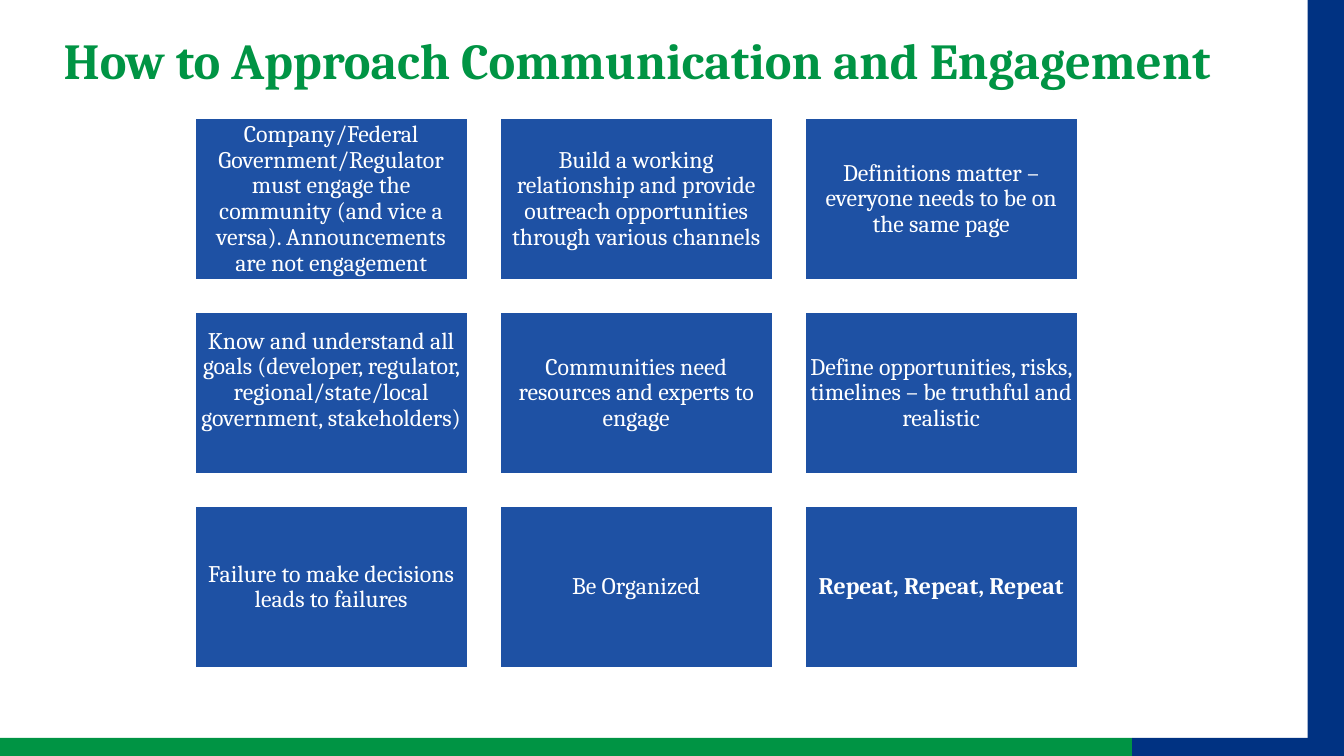
from pptx import Presentation
from pptx.dml.color import RGBColor
from pptx.enum.shapes import MSO_SHAPE as Shape
from pptx.enum.text import MSO_ANCHOR as Anchor, PP_ALIGN as Align
from pptx.util import Inches, Pt

COLORS = {"green": "009444", "navy": "003282", "card": "1E51A4", "white": "FFFFFF"}
WIDTH, HEIGHT = 13.33, 7.5
COLUMNS = 3
CARD_WIDTH, CARD_HEIGHT = 2.75, 1.65
TITLE_FORMAT = {"name": "Cambria", "size": Pt(36), "bold": True}
CARD_FORMAT = {"name": "Cambria", "size": Pt(17), "bold": False}
INSET = 0.07
GOALS = (
    "Know and understand all goals (developer, regulator, "
    "regional/state/local government, stakeholders)"
)
REPEAT = "Repeat, Repeat, Repeat"
APPROACHES = [
    "Company/Federal Government/Regulator must engage the community "
    "(and vice a versa). Announcements are not engagement",
    "Build a working relationship and provide outreach opportunities "
    "through various channels",
    "Definitions matter – everyone needs to be on the same page",
    GOALS,
    "Communities need resources and experts to engage",
    "Define opportunities, risks, timelines – be truthful and realistic",
    "Failure to make decisions leads to failures",
    "Be Organized",
    REPEAT,
]
BOTTOM_INSETS = {GOALS: 0.33}


def rgb(color):
    return RGBColor.from_string(COLORS[color])


def add_block(slide, box, color):
    block = slide.shapes.add_shape(Shape.RECTANGLE, *map(Inches, box))
    block.shadow.inherit = False
    block.fill.solid()
    block.fill.fore_color.rgb = rgb(color)
    block.line.fill.background()
    return block


def write(frame, text, font_format, color, insets):
    frame.word_wrap = True
    frame.vertical_anchor = Anchor.MIDDLE
    for side, inset in insets.items():
        setattr(frame, f"margin_{side}", Inches(inset))
    paragraph = frame.paragraphs[0]
    paragraph.alignment = Align.CENTER
    paragraph.line_spacing = 0.9
    run = paragraph.add_run()
    run.text = text
    for attribute, setting in font_format.items():
        setattr(run.font, attribute, setting)
    run.font.color.rgb = rgb(color)


def add_frame(slide, box):
    left, top, width, height = box
    side, base, split = 0.36, 0.18, 11.23
    add_block(slide, (left + width - side, top, side, height), "navy")
    add_block(slide, (left, top + height - base, split, base), "green")
    add_block(slide, (left + split, top + height - base, width - split, base), "navy")


def add_title(slide, box):
    title = slide.shapes.add_textbox(*map(Inches, box))
    write(title.text_frame, "How to Approach Communication and Engagement",
          TITLE_FORMAT, "green", {"left": 0.1, "right": 0.1})


def add_cards(slide, box):
    left, top, width, height = box
    rows = len(APPROACHES) // COLUMNS
    step_x = (width - CARD_WIDTH) / (COLUMNS - 1)
    step_y = (height - CARD_HEIGHT) / (rows - 1)
    for index, approach in enumerate(APPROACHES):
        row, column = divmod(index, COLUMNS)
        card = add_block(slide, (left + column * step_x, top + row * step_y,
                                 CARD_WIDTH, CARD_HEIGHT), "card")
        card.line.color.rgb = rgb("white")
        card.line.width = Pt(4.33)
        insets = dict.fromkeys(("left", "top", "right", "bottom"), INSET)
        insets["bottom"] = BOTTOM_INSETS.get(approach, INSET)
        write(card.text_frame, approach,
              {**CARD_FORMAT, "bold": approach == REPEAT}, "white", insets)


def main():
    deck = Presentation()
    deck.slide_width, deck.slide_height = Inches(WIDTH), Inches(HEIGHT)
    slide = deck.slides.add_slide(deck.slide_layouts[6])
    add_frame(slide, (0, 0, WIDTH, HEIGHT))
    add_title(slide, (0.24, 0.24, 12.16, 0.78))
    add_cards(slide, (1.91, 1.15, 8.8, 5.5))
    deck.save("out.pptx")


if __name__ == "__main__":
    main()
